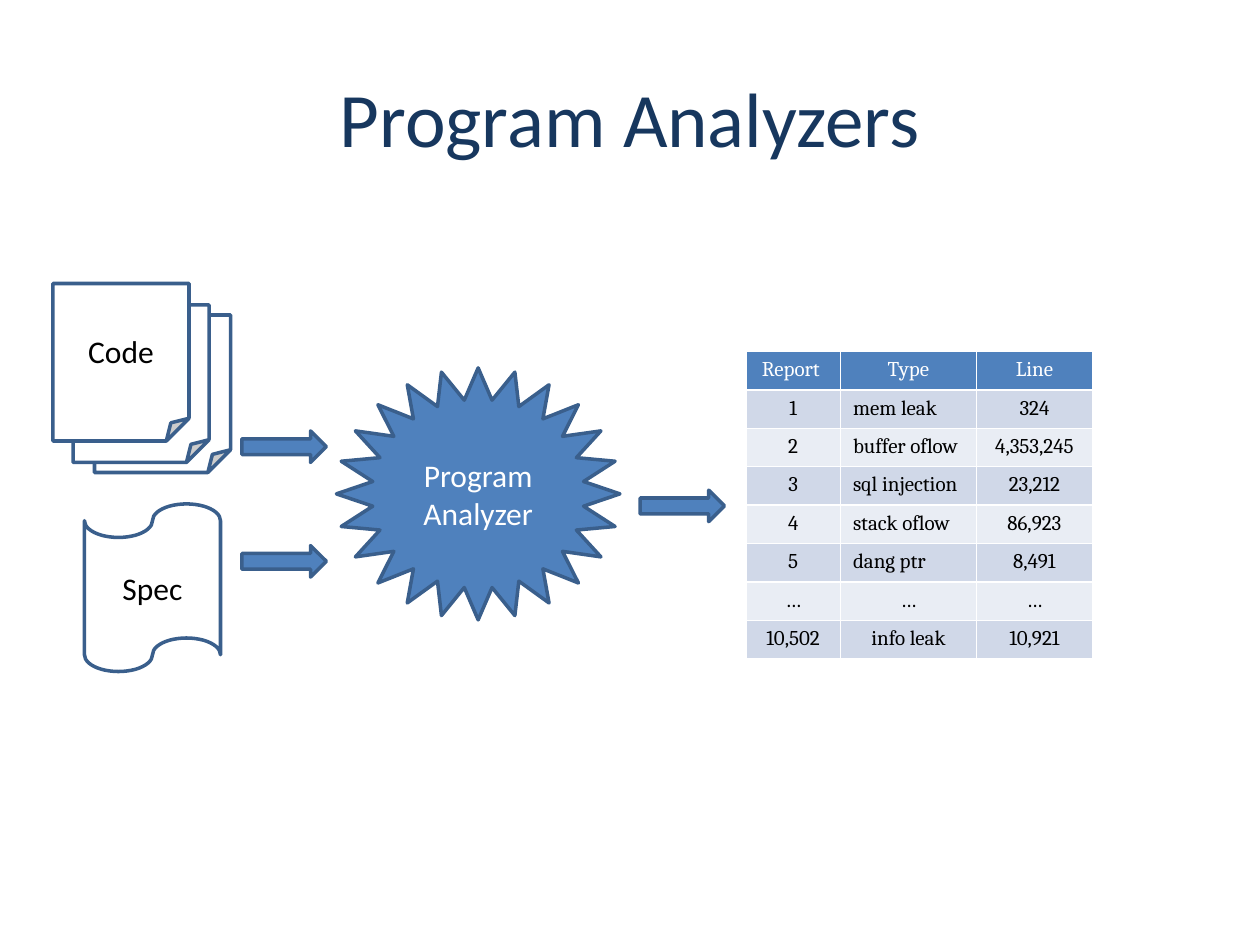
import pptx
import pptx.dml.color
import pptx.enum.shapes
import pptx.enum.text
import pptx.util

Inches = pptx.util.Inches
Pt = pptx.util.Pt
RGBColor = pptx.dml.color.RGBColor
SHAPE = pptx.enum.shapes.MSO_SHAPE
ALIGN = pptx.enum.text.PP_ALIGN
MIDDLE = pptx.enum.text.MSO_ANCHOR.MIDDLE

NAVY = RGBColor(0x17, 0x37, 0x5E)
BLUE = RGBColor(0x4F, 0x81, 0xBD)
OUTLINE = RGBColor(0x3A, 0x5F, 0x8C)
BAND_DARK = RGBColor(0xD0, 0xD8, 0xE8)
BAND_LIGHT = RGBColor(0xE9, 0xED, 0xF4)
WHITE = RGBColor(0xFF, 0xFF, 0xFF)
BLACK = RGBColor(0, 0, 0)

REPORT_ROWS = [
    ("Report ", "Type", "Line"),
    ("1", "mem leak", "324"),
    ("2", "buffer oflow", "4,353,245"),
    ("3", "sql injection", "23,212"),
    ("4", "stack oflow", "86,923"),
    ("5", "dang ptr", "8,491"),
    ("…", "…", "…"),
    ("10,502", "info leak", "10,921"),
]
LEFT_ALIGNED_ROWS = range(1, 6)
COLUMN_WIDTHS = (0.75, 1.08, 0.92)
ROW_HEIGHT = 0.305


def write(frame, text, size, font, color, align=ALIGN.CENTER):
    paragraph = frame.paragraphs[0]
    paragraph.alignment = align
    run = paragraph.add_run()
    run.text = text
    run.font.size = Pt(size)
    run.font.name = font
    run.font.bold = False
    run.font.color.rgb = color


def add_title(slide, text):
    title = slide.shapes.title
    title.left, title.top = Inches(0.5), Inches(0.3)
    title.width, title.height = Inches(9), Inches(1.25)
    title.text_frame.vertical_anchor = MIDDLE
    write(title.text_frame, text, 44, "Calibri", NAVY)


def add_part(slide, kind, left, top, width, height, fill, label=None, color=BLACK):
    part = slide.shapes.add_shape(
        kind, Inches(left), Inches(top), Inches(width), Inches(height))
    part.shadow.inherit = False
    part.fill.solid()
    part.fill.fore_color.rgb = fill
    part.line.color.rgb = OUTLINE
    part.line.width = Pt(2)
    if label:
        part.text_frame.word_wrap = True
        part.text_frame.vertical_anchor = MIDDLE
        write(part.text_frame, label, 18, "Calibri", color)


def add_arrow(slide, left, top):
    add_part(slide, SHAPE.RIGHT_ARROW, left, top, 0.67, 0.25, BLUE)


def add_code_pages(slide):
    for left, top, label in ((0.75, 2.5, None), (0.58, 2.42, None), (0.42, 2.25, "Code")):
        add_part(slide, SHAPE.FOLDED_CORNER, left, top, 1.08, 1.25, WHITE, label)


def add_report(slide, left, top):
    report = slide.shapes.add_table(
        len(REPORT_ROWS), len(COLUMN_WIDTHS), Inches(left), Inches(top),
        Inches(sum(COLUMN_WIDTHS)), Inches(ROW_HEIGHT * len(REPORT_ROWS))).table
    for column, width in zip(report.columns, COLUMN_WIDTHS):
        column.width = Inches(width)
    for r, values in enumerate(REPORT_ROWS):
        report.rows[r].height = Inches(ROW_HEIGHT)
        band = BAND_DARK if r % 2 else BAND_LIGHT
        for c, value in enumerate(values):
            cell = report.cell(r, c)
            cell.fill.solid()
            cell.fill.fore_color.rgb = band if r else BLUE
            is_left = c == 1 and r in LEFT_ALIGNED_ROWS
            write(cell.text_frame, value, 12, "Cambria", BLACK if r else WHITE,
                  ALIGN.LEFT if is_left else ALIGN.CENTER)


def main():
    deck = pptx.Presentation()
    deck.slide_width, deck.slide_height = Inches(10), Inches(7.5)
    slide = deck.slides.add_slide(deck.slide_layouts[5])
    add_title(slide, "Program Analyzers")
    add_arrow(slide, 1.92, 3.42)
    add_code_pages(slide)
    add_report(slide, 5.92, 2.79)
    add_arrow(slide, 5.08, 3.89)
    add_part(slide, SHAPE.STAR_24_POINT, 2.67, 2.92, 2.25, 2, BLUE,
             "Program Analyzer", WHITE)
    add_part(slide, SHAPE.FLOWCHART_PUNCHED_TAPE, 0.67, 4, 1.08, 1.33, WHITE, "Spec")
    add_arrow(slide, 1.92, 4.33)
    deck.save("out.pptx")


if __name__ == "__main__":
    main()
